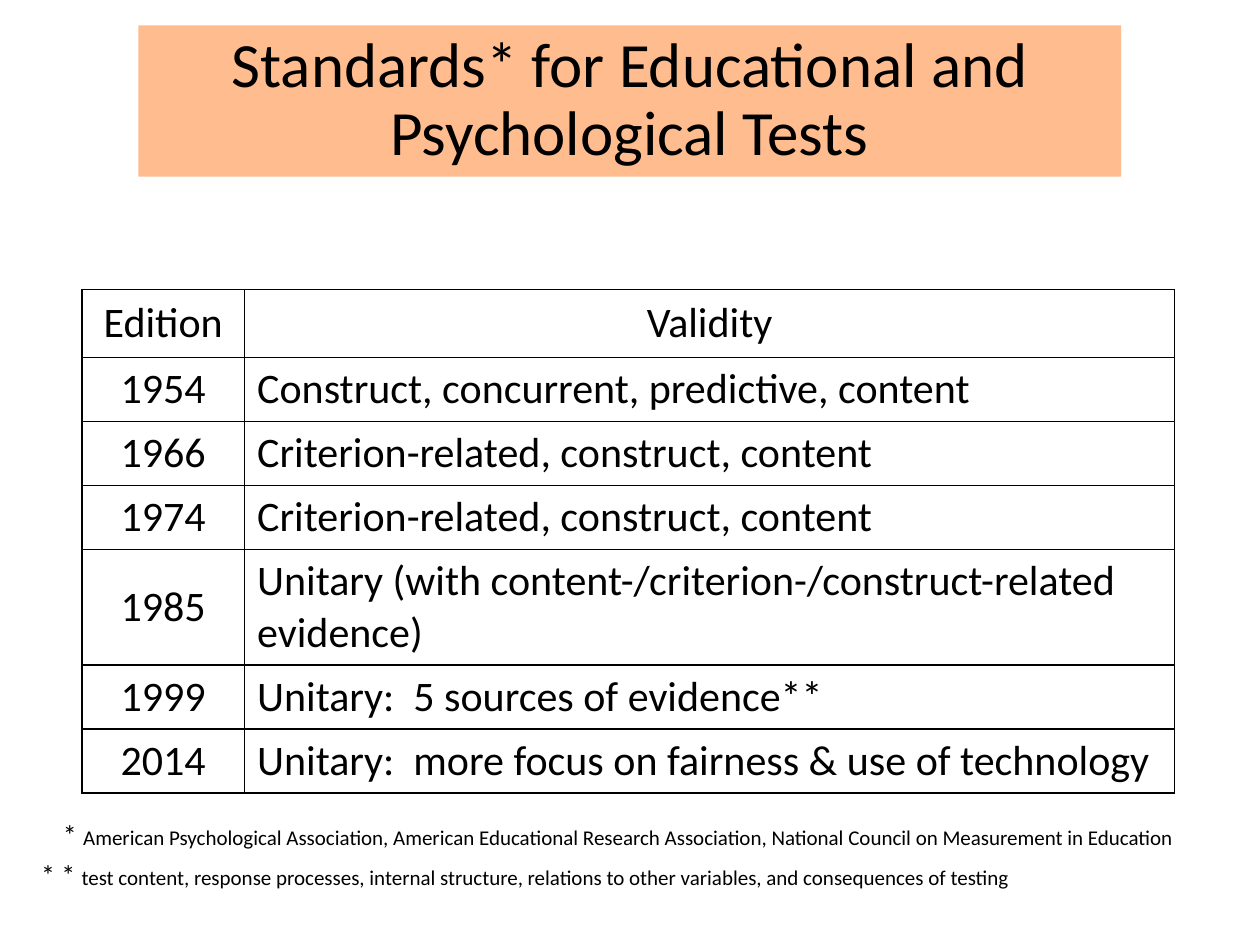
from lxml.etree import SubElement
from pptx import Presentation
from pptx.dml.color import RGBColor
from pptx.enum.text import MSO_ANCHOR, MSO_AUTO_SIZE, PP_ALIGN
from pptx.oxml.ns import qn
from pptx.util import Cm, Pt

# Content
TITLE = "Standards* for Educational and Psychological Tests"
ROWS = [
    ("Edition", "Validity"),
    ("1954", "Construct, concurrent, predictive, content"),
    ("1966", "Criterion-related, construct, content"),
    ("1974", "Criterion-related, construct, content"),
    ("1985", "Unitary (with content-/criterion-/construct-related evidence)"),
    ("1999", "Unitary:  5 sources of evidence**"),
    ("2014", "Unitary:  more focus on fairness & use of technology"),
]
# (left, top, mark, note)
FOOTNOTES = [
    (1.02, 16.36, "* ", "American Psychological Association, American Educational Research "
     "Association, National Council on Measurement in Education"),
    (0.58, 17.17, "* * ", "test content, response processes, internal structure, "
     "relations to other variables, and consequences of testing"),
]

# Style
FONT = "Calibri"
BLACK = RGBColor(0x00, 0x00, 0x00)
PEACH = RGBColor(0xFF, 0xBC, 0x8F)
COL_WIDTHS = (3.28, 18.75)
HEADER_H, ROW_H, TWO_LINE_H = 1.37, 1.29, 2.32


def add_run(p, text, size):
    r = p.add_run()
    r.text = text
    r.font.name, r.font.size, r.font.bold = FONT, Pt(size), False
    r.font.color.rgb = BLACK


def add_borders(cell):
    tc_pr = cell._tc.get_or_add_tcPr()
    for i, side in enumerate(("lnL", "lnR", "lnT", "lnB")):
        ln = SubElement(tc_pr, qn(f"a:{side}"), w=str(Pt(1)))
        fill = SubElement(ln, qn("a:solidFill"))
        SubElement(fill, qn("a:srgbClr"), val=str(BLACK))
        tc_pr.remove(ln)
        tc_pr.insert(i, ln)  # borders come before the cell fill


prs = Presentation()
prs.slide_width, prs.slide_height = Cm(25.4), Cm(19.05)
s = prs.slides.add_slide(prs.slide_layouts[5])

# Title
title = s.shapes.title
title.left, title.top, title.width, title.height = Cm(2.79), Cm(0.51), Cm(19.81), Cm(3.05)
title.fill.solid()
title.fill.fore_color.rgb = PEACH
tf = title.text_frame
tf.vertical_anchor = MSO_ANCHOR.MIDDLE
tf.auto_size = MSO_AUTO_SIZE.NONE
p = tf.paragraphs[0]
p.alignment, p.line_spacing = PP_ALIGN.CENTER, 0.9
add_run(p, TITLE, 36)

# Table of editions
heights = [HEADER_H] + [TWO_LINE_H if len(text) > 55 else ROW_H for _, text in ROWS[1:]]
table = s.shapes.add_table(len(ROWS), len(COL_WIDTHS), Cm(1.65), Cm(5.84),
                           Cm(sum(COL_WIDTHS)), Cm(sum(heights))).table
table.first_row = table.horz_banding = False
for col, width in zip(table.columns, COL_WIDTHS):
    col.width = Cm(width)
for i, (row, height) in enumerate(zip(table.rows, heights)):
    row.height = Cm(height)
    for j, text in enumerate(ROWS[i]):
        cell = table.cell(i, j)
        cell.fill.background()
        cell.vertical_anchor = MSO_ANCHOR.MIDDLE
        add_borders(cell)
        p = cell.text_frame.paragraphs[0]
        p.alignment = PP_ALIGN.CENTER if i == 0 or j == 0 else PP_ALIGN.LEFT
        add_run(p, text, 24)

# Footnotes
for left, top, mark, note in FOOTNOTES:
    tf = s.shapes.add_textbox(Cm(left), Cm(top), Cm(23.09), Cm(0.94)).text_frame
    tf.word_wrap = True
    tf.auto_size = MSO_AUTO_SIZE.SHAPE_TO_FIT_TEXT
    p = tf.paragraphs[0]
    add_run(p, mark, 16)
    add_run(p, note, 12)

prs.save("out.pptx")
